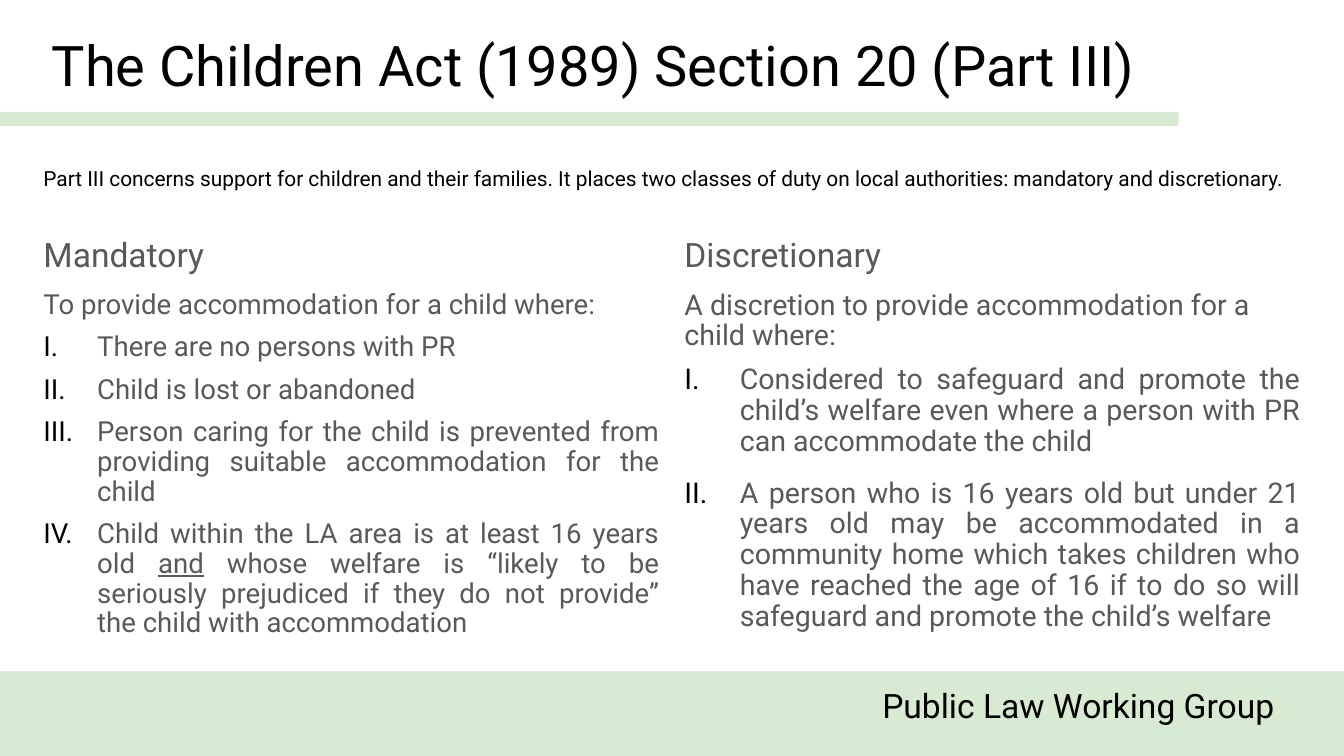
from dataclasses import dataclass

from lxml import etree
from pptx import Presentation
from pptx.dml.color import RGBColor
from pptx.enum.shapes import MSO_SHAPE
from pptx.enum.text import MSO_ANCHOR, MSO_AUTO_SIZE, PP_ALIGN
from pptx.oxml.ns import qn
from pptx.util import Pt

RECTANGLE = MSO_SHAPE.RECTANGLE
TOP, MIDDLE, BOTTOM = MSO_ANCHOR.TOP, MSO_ANCHOR.MIDDLE, MSO_ANCHOR.BOTTOM
LEFT, JUSTIFY = PP_ALIGN.LEFT, PP_ALIGN.JUSTIFY
FIXED_SIZE = MSO_AUTO_SIZE.NONE
COMPARISON_LAYOUT = 4


@dataclass(frozen=True)
class Theme:
    """Colours, font and type sizes of the slide."""
    font: str = "Roboto"
    black: str = "000000"
    grey: str = "595959"
    green: str = "D9EAD3"
    white: str = "FFFFFF"
    title: float = 40
    footer: float = 24
    heading: float = 24
    intro: float = 14.9
    mandatory: float = 19.7
    discretionary: float = 20.4


THEME = Theme()
WIDTH, HEIGHT = 960, 540
MARGIN = 27.4
PANEL_HEIGHT = 479.5
RULE_WIDTH = 842
HEADING_HEIGHT = 48.5
LIST_OFFSET = 52.6
WIDE_INSET, NARROW_INSET = 9.6, 3.6

MANDATORY_DUTIES = [
    (9, ["There are no persons with PR"]),
    (9, ["Child is lost or abandoned"]),
    (9, ["Person caring for the child is prevented from providing suitable "
         "accommodation for the child"]),
    (9, ["Child within the LA area is at least 16 years old ", "and",
         " whose welfare is “likely to be seriously prejudiced if they do not "
         "provide” the child with accommodation"]),
]
DISCRETIONARY_DUTIES = [
    (9, ["Considered to safeguard and promote the child’s welfare even where "
         "a person with PR can accommodate the child"]),
    (15, ["A person who is 16 years old but under 21 years old may be "
          "accommodated in a community home which takes children who have "
          "reached the age of 16 if to do so will safeguard and promote the "
          "child’s welfare"]),
]


def place(holder, box, inset, anchor):
    """Fit a text holder to its box and return its text frame."""
    holder.left, holder.top, holder.width, holder.height = map(Pt, box)
    frame = holder.text_frame
    frame.auto_size = FIXED_SIZE
    frame.word_wrap = True
    frame.vertical_anchor = anchor
    frame.margin_left = frame.margin_right = Pt(inset)
    frame.margin_top = frame.margin_bottom = Pt(inset)
    return frame


def write(paragraph, runs, size, colour, align=LEFT, before=0, spacing=0.9):
    """Fill a paragraph run by run, underlining every second run."""
    paragraph.alignment = align
    paragraph.line_spacing = spacing
    paragraph.space_before = Pt(before)
    for index, words in enumerate(runs):
        run = paragraph.add_run()
        run.text = words
        run.font.name = THEME.font
        run.font.size = Pt(size)
        run.font.bold = False
        run.font.underline = index % 2 == 1
        run.font.color.rgb = RGBColor.from_string(colour)


def set_indent(paragraph, hanging):
    """Hang the paragraph, numbered in Roman numerals if indented."""
    properties = paragraph._p.get_or_add_pPr()
    properties.set("marL", str(Pt(hanging)))
    properties.set("indent", str(-Pt(hanging)))
    if not hanging:
        etree.SubElement(properties, qn("a:buNone"))
        return
    colour = etree.SubElement(properties, qn("a:buClr"))
    etree.SubElement(colour, qn("a:srgbClr"), val=THEME.black)
    etree.SubElement(properties, qn("a:buFont"), typeface=THEME.font)
    etree.SubElement(properties, qn("a:buAutoNum"), type="romanUcPeriod")


def add_band(slide, box, colour):
    """Add a plain filled rectangle."""
    band = slide.shapes.add_shape(RECTANGLE, *map(Pt, box))
    band.shadow.inherit = False
    band.fill.solid()
    band.fill.fore_color.rgb = RGBColor.from_string(colour)
    band.line.fill.background()
    return band


def add_backdrop(slide):
    """Lay a white panel over the green background, behind all text."""
    slide.background.fill.solid()
    slide.background.fill.fore_color.rgb = RGBColor.from_string(THEME.green)
    panel = add_band(slide, (0, 0, WIDTH, PANEL_HEIGHT), THEME.white)
    slide.shapes._spTree.insert(2, panel._element)


def add_header(slide, box):
    """Add the title, the rule below it and the introduction."""
    left, top, width, height = box
    title = place(slide.shapes.title, (left, top, RULE_WIDTH, 74),
                  WIDE_INSET, TOP)
    write(title.paragraphs[0], ["The Children Act (1989) Section 20 (Part III)"],
          THEME.title, THEME.black)
    add_band(slide, (0, top + 62.6, RULE_WIDTH, 10), THEME.green)
    intro_box = (left, top + height - 48, width, 48)
    intro = place(slide.shapes.add_textbox(0, 0, 0, 0), intro_box,
                  NARROW_INSET, MIDDLE)
    write(intro.paragraphs[0],
          ["Part III concerns support for children and their families. It "
           "places two classes of duty on local authorities: mandatory and "
           "discretionary."], THEME.intro, THEME.black)


def add_duties(holders, box, heading, lead, duties, size, hanging):
    """Fill one column with a heading, a lead-in and numbered duties."""
    left, top, width, height = box
    heading_holder, list_holder = holders
    heading_frame = place(heading_holder, (left, top, width, HEADING_HEIGHT),
                          NARROW_INSET, BOTTOM)
    write(heading_frame.paragraphs[0], [heading], THEME.heading, THEME.grey)
    list_box = (left, top + LIST_OFFSET, width, height - LIST_OFFSET)
    duty_list = place(list_holder, list_box, NARROW_INSET, TOP)
    write(duty_list.paragraphs[0], [lead], size, THEME.grey)
    set_indent(duty_list.paragraphs[0], 0)
    for before, runs in duties:
        duty = duty_list.add_paragraph()
        write(duty, runs, size, THEME.grey, JUSTIFY, before)
        set_indent(duty, hanging)


def add_footer(slide, box):
    """Add the name of the group in the bottom band."""
    footer = place(slide.shapes.add_textbox(0, 0, 0, 0), box, WIDE_INSET, TOP)
    write(footer.paragraphs[0], ["Public Law Working Group"],
          THEME.footer, THEME.black, spacing=1.0)


def main():
    """Build and save the slide."""
    deck = Presentation()
    deck.slide_width, deck.slide_height = Pt(WIDTH), Pt(HEIGHT)
    slide = deck.slides.add_slide(deck.slide_layouts[COMPARISON_LAYOUT])
    holders = list(slide.placeholders)[1:]
    add_backdrop(slide)
    add_header(slide, (MARGIN, 17.3, WIDTH - 2 * MARGIN, 135))
    add_duties(holders[:2], (MARGIN, 151.2, 447, 342.6), "Mandatory",
               "To provide accommodation for a child where:",
               MANDATORY_DUTIES, THEME.mandatory, 38.4)
    add_duties(holders[2:], (485.3, 151.2, 447, 342.6), "Discretionary",
               "A discretion to provide accommodation for a child where:",
               DISCRETIONARY_DUTIES, THEME.discretionary, 39.6)
    add_footer(slide, (620.6, PANEL_HEIGHT, 339.4, 52))
    deck.save("out.pptx")


if __name__ == "__main__":
    main()
